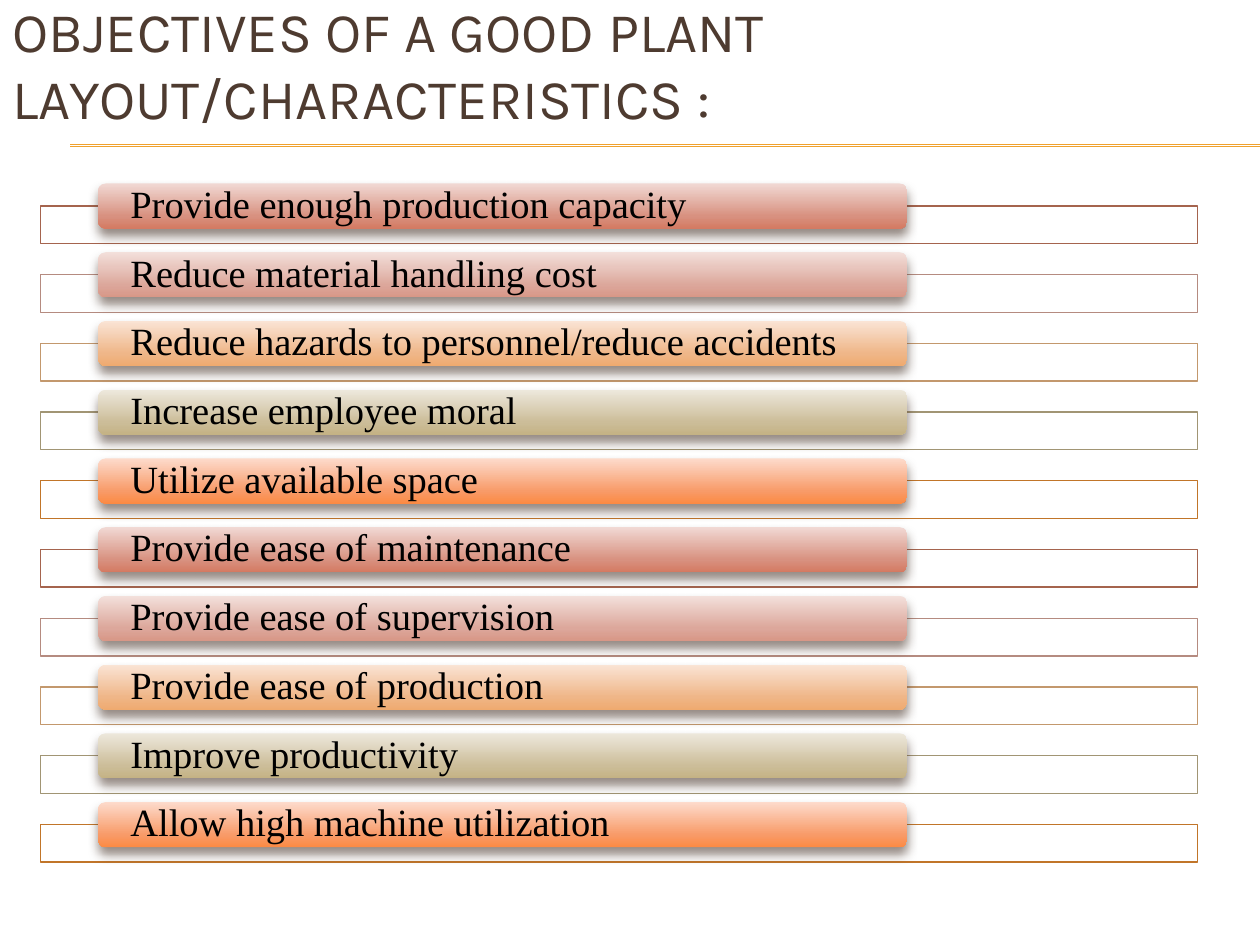
from dataclasses import dataclass
from typing import NamedTuple

from lxml import etree
from pptx import Presentation
from pptx import util as u
from pptx.dml.color import RGBColor
from pptx.enum import shapes, text
from pptx.oxml.ns import qn


@dataclass(frozen=True)
class Theme:
    title_font: str = "Karla"
    body_font: str = "Times New Roman"
    title_size: float = 32
    body_size: float = 22
    brown: str = "4E3B30"
    black: str = "000000"
    white: str = "FFFFFF"
    gold: str = "F0A22E"


class Box(NamedTuple):
    left: float
    top: float
    width: float
    height: float

    def lower(self, distance: float) -> "Box":
        return self._replace(top=self.top + distance)

    def lengths(self) -> list[u.Length]:
        return [u.Cm(value) for value in self]


class Palette(NamedTuple):
    outline: str
    light: str
    middle: str
    dark: str


class Lettering(NamedTuple):
    font: str
    size: float
    color: str


THEME = Theme()
TITLE = "OBJECTIVES OF A GOOD PLANT LAYOUT/CHARACTERISTICS :"
OBJECTIVES = [
    "Provide enough production capacity",
    "Reduce material handling cost",
    "Reduce hazards to personnel/reduce accidents",
    "Increase employee moral",
    "Utilize available space",
    "Provide ease of maintenance",
    "Provide ease of supervision",
    "Provide ease of production",
    "Improve productivity",
    "Allow high machine utilization",
]
PALETTES = [
    Palette("A5644E", "F1D9D4", "D89180", "D47A62"),
    Palette("B58B80", "F3E0DB", "DCA79B", "D89787"),
    Palette("C3986D", "FAE4D5", "EFB688", "EFAA6F"),
    Palette("A19574", "EDE8DC", "CCBD99", "C4B284"),
    Palette("C17529", "FDDBCC", "F89B69", "FC8A43"),
]
TITLE_BOX = Box(0, -0.66, 22.86, 3.89)
FRAME = Box(0.82, 4.15, 23.32, 0.76)
BAR = Box(1.98, 3.7, 16.31, 0.91)
LABEL = Box(2.02, 3.74, 16.23, 0.82)
ROW_PITCH = 12.47 / (len(OBJECTIVES) - 1)
LABEL_INSET = 0.61


def add_color(parent, color: str, alpha: int = 100) -> None:
    value = etree.SubElement(parent, qn("a:srgbClr"), val=color)
    if alpha < 100:
        etree.SubElement(value, qn("a:alpha"), val=str(alpha * 1000))


def add_rule(slide, top: float) -> None:
    rule = slide.shapes.add_connector(
        shapes.MSO_CONNECTOR.STRAIGHT, u.Cm(1.42), u.Cm(top), u.Cm(25.4), u.Cm(top)
    )
    rule.line.color.rgb = RGBColor.from_string(THEME.gold)
    rule.line.width = u.Pt(0.75)
    etree.SubElement(rule._element.spPr, qn("a:effectLst"))


def add_text(slide, box: Box, wording: str, style: Lettering):
    holder = slide.shapes.add_textbox(*box.lengths())
    frame = holder.text_frame
    frame.word_wrap = True
    frame.vertical_anchor = text.MSO_ANCHOR.MIDDLE
    run = frame.paragraphs[0].add_run()
    run.text = wording
    run.font.name = style.font
    run.font.size = u.Pt(style.size)
    run.font.color.rgb = RGBColor.from_string(style.color)
    return frame


def add_frame(slide, box: Box, outline: str) -> None:
    frame = slide.shapes.add_shape(shapes.MSO_SHAPE.RECTANGLE, *box.lengths())
    frame.shadow.inherit = False
    frame.fill.solid()
    frame.fill.fore_color.rgb = RGBColor.from_string(THEME.white)
    fill_color = frame._element.spPr.find(qn("a:solidFill"))[0]
    etree.SubElement(fill_color, qn("a:alpha"), val="90000")
    frame.line.color.rgb = RGBColor.from_string(outline)
    frame.line.width = u.Pt(0.79)


def add_bar(slide, box: Box, palette: Palette) -> None:
    bar = slide.shapes.add_shape(shapes.MSO_SHAPE.ROUNDED_RECTANGLE, *box.lengths())
    bar.line.fill.background()
    bar.fill.gradient()
    bar.fill.gradient_angle = 270
    properties = bar._element.spPr
    stops = properties.find(qn("a:gradFill")).find(qn("a:gsLst"))
    for stop in list(stops):
        stops.remove(stop)
    for position, color in zip((0, 72, 100), palette[1:]):
        add_color(etree.SubElement(stops, qn("a:gs"), pos=str(position * 1000)), color)
    bar.shadow.inherit = False
    shadow = etree.SubElement(
        properties.find(qn("a:effectLst")),
        qn("a:outerShdw"),
        blurRad=str(u.Pt(6)),
        dist=str(u.Pt(4)),
        dir=str(90 * 60000),
        rotWithShape="0",
    )
    add_color(shadow, THEME.brown, 60)


def add_label(slide, box: Box, wording: str) -> None:
    style = Lettering(THEME.body_font, THEME.body_size, THEME.black)
    frame = add_text(slide, box, wording, style)
    frame.margin_left = frame.margin_right = u.Cm(LABEL_INSET)
    frame.margin_top = frame.margin_bottom = 0
    frame.paragraphs[0].line_spacing = 0.9


def main() -> None:
    deck = Presentation()
    deck.slide_width, deck.slide_height = u.Cm(25.4), u.Cm(19.05)
    slide = deck.slides.add_slide(deck.slide_layouts[6])
    for top in (2.92, 2.95):
        add_rule(slide, top)
    add_text(
        slide, TITLE_BOX, TITLE, Lettering(THEME.title_font, THEME.title_size, THEME.brown)
    )
    for row, objective in enumerate(OBJECTIVES):
        palette = PALETTES[row % len(PALETTES)]
        drop = row * ROW_PITCH
        add_frame(slide, FRAME.lower(drop), palette.outline)
        add_bar(slide, BAR.lower(drop), palette)
        add_label(slide, LABEL.lower(drop), objective)
    deck.save("out.pptx")


if __name__ == "__main__":
    main()
